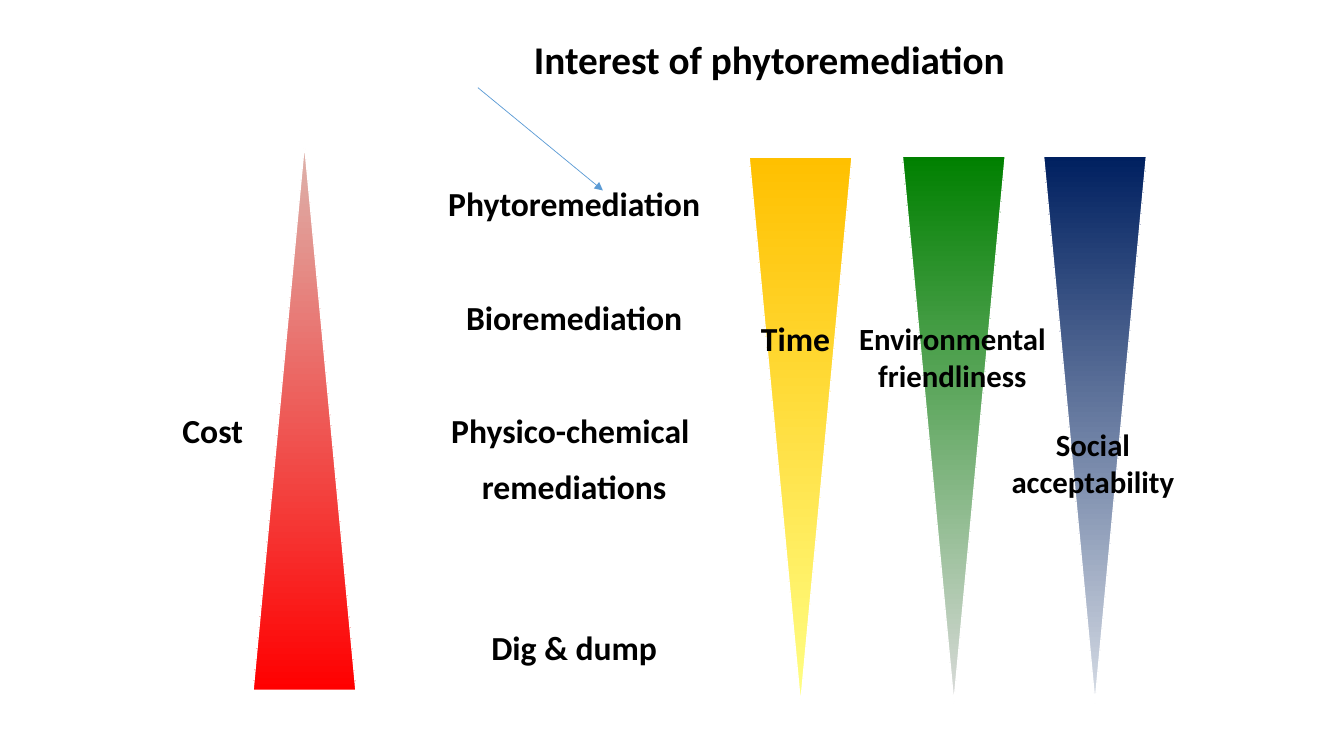
"""Build a slide that compares soil remediation methods with tapering scales."""
from dataclasses import dataclass

from lxml import etree
from pptx import Presentation
from pptx import util as u
from pptx.dml.color import RGBColor
from pptx.enum import shapes, text
from pptx.oxml import ns

EMU_PER_PX = 9144


@dataclass(frozen=True)
class Theme:
    font: str = "Calibri"
    ink: str = "000000"
    paper: str = "FFFFFF"
    arrow: str = "5B9BD5"
    cost: tuple = ("DDB4AD", "FF0000")
    time: tuple = ("FFFF85", "FFC000")
    environment: tuple = ("DBDBDB", "008000")
    social: tuple = ("D6DCE5", "002060")
    title_size: int = 28
    label_size: int = 24
    small_size: int = 22


def px(length):
    return u.Emu(length * EMU_PER_PX)


def write(para, words, *, font, size, color, before=0):
    para.alignment = text.PP_ALIGN.CENTER
    para.line_spacing = 1.0
    para.space_before = u.Pt(before)
    span = para.add_run()
    span.text = words
    span.font.name = font
    span.font.size = u.Pt(size)
    span.font.bold = True
    span.font.color.rgb = RGBColor.from_string(color)


class SlideBuilder:
    def __init__(self, page, theme):
        self.page = page
        self.theme = theme

    def fill_box(self, box, paragraphs, size):
        frame = box.text_frame
        frame.word_wrap = True
        frame.auto_size = text.MSO_AUTO_SIZE.NONE
        frame.vertical_anchor = text.MSO_ANCHOR.TOP
        for index, (words, before) in enumerate(paragraphs):
            para = frame.add_paragraph() if index else frame.paragraphs[0]
            write(para, words, font=self.theme.font, size=size,
                  color=self.theme.ink, before=before)

    def title(self, words, left, top, width, height):
        box = self.page.shapes.title
        box.left, box.top = px(left), px(top)
        box.width, box.height = px(width), px(height)
        self.fill_box(box, [(words, 0)], self.theme.title_size)

    def label(self, paragraphs, left, top, width, height, size):
        box = self.page.shapes.add_textbox(
            px(left), px(top), px(width), px(height))
        self.fill_box(box, paragraphs, size)

    def wedge(self, left, top, colors, rotation=0):
        wedge = self.page.shapes.add_shape(
            shapes.MSO_SHAPE.FLOWCHART_EXTRACT,
            px(left), px(top), px(102), px(543))
        wedge.rotation = rotation
        wedge.shadow.inherit = False
        wedge.fill.gradient()
        wedge.fill.gradient_angle = 270
        for stop, color in zip(wedge.fill.gradient_stops, colors):
            stop.color.rgb = RGBColor.from_string(color)
        wedge.line.color.rgb = RGBColor.from_string(self.theme.paper)
        wedge.line.width = u.Pt(1)

    def arrow(self, start, end):
        arrow = self.page.shapes.add_connector(
            shapes.MSO_CONNECTOR.STRAIGHT, *map(px, start + end))
        arrow.line.color.rgb = RGBColor.from_string(self.theme.arrow)
        arrow.line.width = u.Pt(0.5)
        etree.SubElement(arrow.line._get_or_add_ln(), ns.qn("a:tailEnd"),
                         type="triangle")
        etree.SubElement(arrow._element.spPr, ns.qn("a:effectLst"))


def main():
    theme = Theme()
    deck = Presentation()
    deck.slide_width, deck.slide_height = u.Inches(13.33), u.Inches(7.5)
    page = deck.slides.add_slide(deck.slide_layouts[5])
    slide = SlideBuilder(page, theme)

    slide.title("Interest of phytoremediation", 263, 30, 1000, 57)
    methods = [("Phytoremediation", 0), ("Bioremediation", 52),
               ("Physico-chemical ", 52), ("remediations", 11.4),
               ("Dig & dump", 86.4)]
    slide.label(methods, 298, 177, 543, 525, theme.label_size)

    slide.wedge(251, 142, theme.cost)
    for left, top, colors in [(743, 156, theme.time),
                              (895, 155, theme.environment),
                              (1035, 155, theme.social)]:
        slide.wedge(left, top, colors, rotation=180)

    for words, left, top, width, height, size in [
            ("Cost", 141, 402, 140, 51, theme.label_size),
            ("Time", 719, 310, 140, 51, theme.label_size),
            ("Environmental friendliness", 824, 312, 241, 84,
             theme.small_size),
            ("Social acceptability", 966, 417, 236, 84, theme.small_size)]:
        slide.label([(words, 0)], left, top, width, height, size)

    slide.arrow((474, 87), (598, 189))
    deck.save("out.pptx")


if __name__ == "__main__":
    main()
